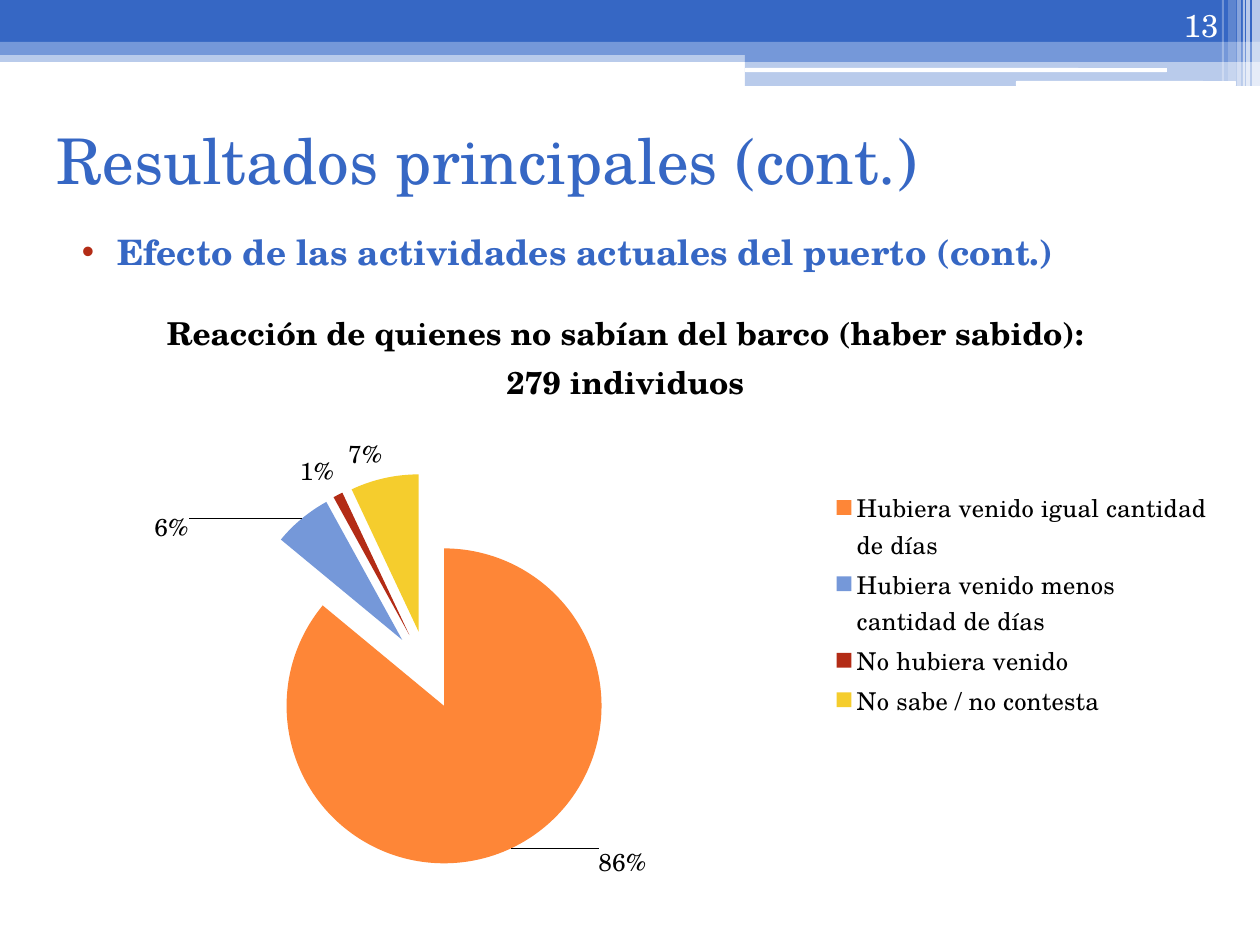
"""Build the survey results slide: banner, heading, bullet and exploded pie chart."""
from lxml import etree
from pptx import Presentation
from pptx import util as u
from pptx.chart.data import CategoryChartData
from pptx.dml.color import RGBColor
from pptx.enum import chart as ch, shapes, text
from pptx.oxml import parse_xml
from pptx.oxml.ns import nsdecls, qn

PX = 914400 / 126
FONT = "TeX Gyre Schola"
BLUE = RGBColor(0x36, 0x67, 0xC4)
SKY = RGBColor(0x75, 0x98, 0xD9)
WHITE = RGBColor(0xFF, 0xFF, 0xFF)
BLACK = RGBColor(0, 0, 0)
ORANGE = RGBColor(0xFE, 0x86, 0x37)
RED = RGBColor(0xB3, 0x2C, 0x16)
YELLOW = RGBColor(0xF5, 0xCD, 0x2D)

TITLE = "Resultados principales (cont.)"
BULLET = "Efecto de las actividades actuales del puerto (cont.)"
PAGE_NUMBER = "13"
CHART_TITLE = ["Reacción de quienes no sabían del barco (haber sabido):", "279 individuos"]
ANSWERS = [
    ("Hubiera venido igual cantidad de días", 86, ORANGE),
    ("Hubiera venido menos cantidad de días", 6, SKY),
    ("No hubiera venido", 1, RED),
    ("No sabe / no contesta", 7, YELLOW),
]
LABEL_SHIFTS = {0: (0.07, -0.02), 1: (-0.09, 0.05)}
EXPLOSION = 25

RECT, ROUND = shapes.MSO_SHAPE.RECTANGLE, shapes.MSO_SHAPE.ROUNDED_RECTANGLE
BANDS = [
    (RECT, (0, 50, 1260, 12), SKY, 50),
    (RECT, (0, 0, 1260, 43), BLUE, 100),
    (RECT, (0, 42, 1260, 13), SKY, 100),
    (RECT, (745, 49, 515, 13), SKY, 100),
    (RECT, (745, 61, 515, 25), SKY, 50),
    (ROUND, (745, 68, 422, 4), WHITE, 100),
    (ROUND, (1016, 81, 220, 5), WHITE, 100),
]
STRIPES = [(1252, 8, 86, 65), (1246, 4, 86, 65), (1243, 2, 86, 60),
           (1237, 4, 86, 40), (1228, 8, 81, 20), (1222, 2, 81, 30)]
BANDS += [(RECT, (left, 0, width, height), WHITE, opacity)
          for left, width, height, opacity in STRIPES]

TITLE_BOX = (44, 86, 1134, 147)
BODY_BOX = (54, 224, 1134, 702)
NUMBER_BOX = (1126, 0, 105, 50)
CHART_BOX = (25, 283, 1201, 635)
PIE_BOX = (228, 472, 396, 396)
LEGEND_BOX = (832, 485, 384, 236)


def emu(lengths):
    return [u.Emu(round(length * PX)) for length in lengths]


def move(shape, box):
    shape.left, shape.top, shape.width, shape.height = emu(box)


def style(font, size, color, bold=False):
    font.name, font.size, font.bold = FONT, u.Pt(size), bold
    font.color.rgb = color


def add_band(page, kind, box, color, opacity):
    band = page.shapes.add_shape(kind, *emu(box))
    band.shadow.inherit = False
    band.fill.solid()
    band.fill.fore_color.rgb = color
    band.line.fill.background()
    if opacity < 100:
        srgb = band._element.spPr.find(".//" + qn("a:srgbClr"))
        etree.SubElement(srgb, qn("a:alpha"), val=str(opacity * 1000))


def layout(**values):
    parts = "".join(f'<c:{name} val="{value:.2f}"/>' for name, value in values.items())
    return f"<c:manualLayout>{parts}</c:manualLayout>"


def place(parent, before, manual):
    for old in parent.findall(qn("c:layout")):
        parent.remove(old)
    before.addnext(parse_xml(f"<c:layout {nsdecls('c')}>{manual}</c:layout>"))


def within_chart(box, inner=False):
    left, top, width, height = CHART_BOX
    target = '<c:layoutTarget val="inner"/>' if inner else ""
    modes = '<c:xMode val="edge"/><c:yMode val="edge"/>'
    manual = layout(x=(box[0] - left) / width, y=(box[1] - top) / height,
                    w=box[2] / width, h=box[3] / height)
    return manual.replace("<c:x ", target + modes + "<c:x ", 1)


def add_texts(page):
    title, body = page.shapes.title, page.placeholders[1]
    number = page.shapes.add_textbox(*emu(NUMBER_BOX))
    left, right = text.PP_ALIGN.LEFT, text.PP_ALIGN.RIGHT
    middle, top, bottom = (text.MSO_ANCHOR.MIDDLE, text.MSO_ANCHOR.TOP,
                           text.MSO_ANCHOR.BOTTOM)
    for box, place_at, words, align, anchor, size, color, bold in [
        (title, TITLE_BOX, TITLE, left, middle, 36, BLUE, False),
        (body, BODY_BOX, BULLET, left, top, 20, BLUE, True),
        (number, NUMBER_BOX, PAGE_NUMBER, right, bottom, 18, WHITE, False),
    ]:
        move(box, place_at)
        frame = box.text_frame
        frame.word_wrap, frame.auto_size = True, text.MSO_AUTO_SIZE.NONE
        frame.vertical_anchor = anchor
        frame.text = words
        para = frame.paragraphs[0]
        para.alignment = align
        if box is body:
            add_bullet(para)
        style(para.font, size, color, bold)


def add_bullet(para):
    para.space_before = u.Pt(3)
    props = para._p.get_or_add_pPr()
    props.set("marL", str(u.Inches(0.4)))
    props.set("indent", str(u.Inches(-0.28)))
    color = etree.SubElement(props, qn("a:buClr"))
    etree.SubElement(color, qn("a:srgbClr"), val=str(RED))
    etree.SubElement(props, qn("a:buChar"), char="•")


def add_pie(page):
    data = CategoryChartData()
    data.categories = [answer for answer, _, _ in ANSWERS]
    data.add_series("Series 1", [share for _, share, _ in ANSWERS])
    chart = page.shapes.add_chart(ch.XL_CHART_TYPE.PIE, *emu(CHART_BOX), data).chart
    style(chart.font, 10, BLACK)

    frame = chart.chart_title.text_frame
    frame.text = CHART_TITLE[0]
    frame.add_paragraph().text = CHART_TITLE[1]
    for para in frame.paragraphs:
        style(para.font, 18, BLACK, True)
    chart.chart_title.include_in_layout = False

    chart.has_legend = True
    legend = chart.legend
    legend.position = ch.XL_LEGEND_POSITION.RIGHT
    legend.include_in_layout = False
    style(legend.font, 14, BLACK)
    place(legend._element, legend._element.find(qn("c:legendPos")), within_chart(LEGEND_BOX))

    plot = chart.plots[0]
    plot.vary_by_categories = True
    series = plot.series[0]
    series._element.find(qn("c:tx")).addnext(
        parse_xml(f'<c:explosion {nsdecls("c")} val="{EXPLOSION}"/>'))
    for index, (_, _, color) in enumerate(ANSWERS):
        fill = series.points[index].format.fill
        fill.solid()
        fill.fore_color.rgb = color

    labels = series.data_labels
    labels.show_value, labels.show_percentage = False, True
    labels.number_format, labels.number_format_is_linked = "0%", False
    labels.position = ch.XL_LABEL_POSITION.OUTSIDE_END
    style(labels.font, 14, BLACK)
    for index in LABEL_SHIFTS:
        label = series.points[index].data_label
        style(label.font, 14, BLACK)
        label.position = ch.XL_LABEL_POSITION.OUTSIDE_END
    for label, (x, y) in zip(series._element.iter(qn("c:dLbl")), LABEL_SHIFTS.values()):
        place(label, label.find(qn("c:idx")), layout(x=x, y=y))
        label.find(qn("c:showVal")).set("val", "0")
        label.find(qn("c:showPercent")).set("val", "1")

    area = plot._element.getparent()
    for old in area.findall(qn("c:layout")):
        area.remove(old)
    area.insert(0, parse_xml(
        f"<c:layout {nsdecls('c')}>{within_chart(PIE_BOX, inner=True)}</c:layout>"))


def main():
    deck = Presentation()
    deck.slide_width, deck.slide_height = emu((1260, 945))
    page = deck.slides.add_slide(deck.slide_layouts[1])
    for band in BANDS:
        add_band(page, *band)
    add_texts(page)
    add_pie(page)
    deck.save("out.pptx")


if __name__ == "__main__":
    main()
